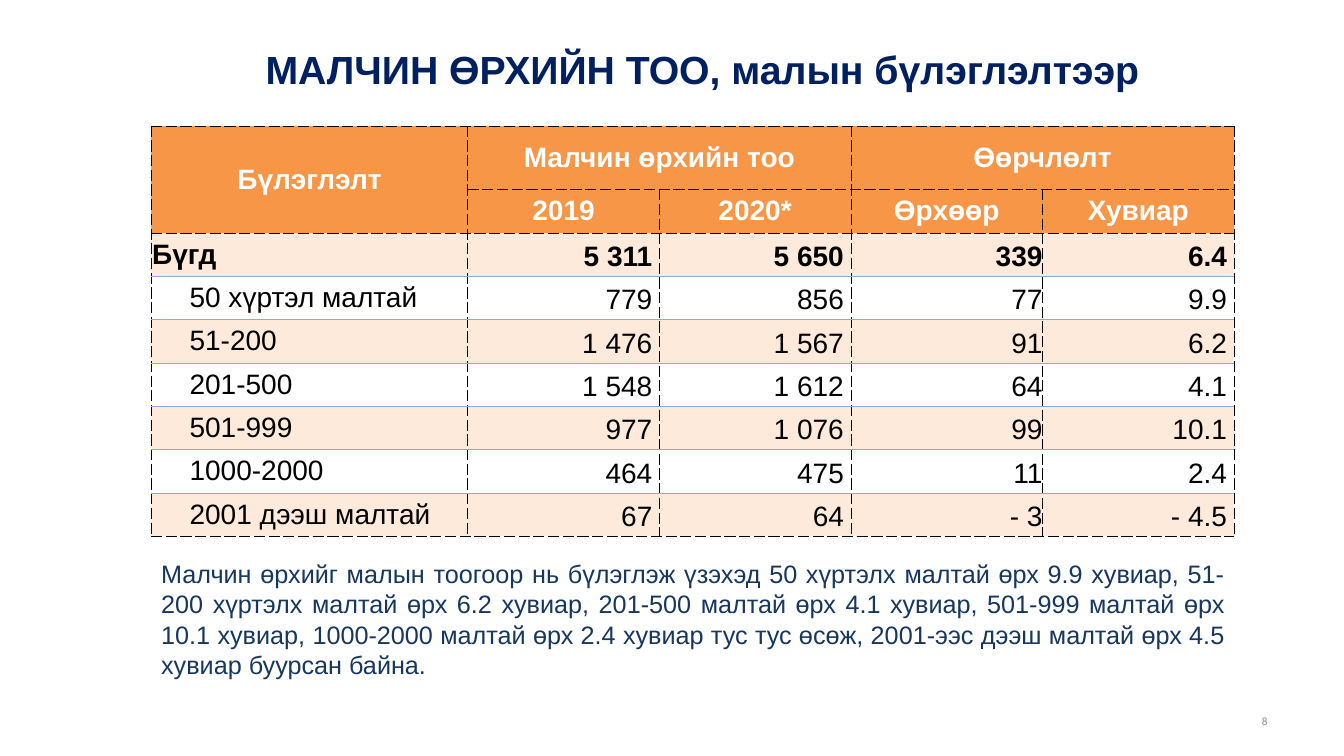
"""Build the slide on herder households grouped by herd size."""
from lxml.etree import SubElement
from pptx import Presentation
from pptx.dml.color import RGBColor
from pptx.enum.text import MSO_ANCHOR as Anchor, PP_ALIGN as Align
from pptx.oxml.ns import qn
from pptx.util import Inches, Pt

NAVY = RGBColor(0x00, 0x20, 0x60)
DARK_BLUE = RGBColor(0x17, 0x37, 0x5E)
GRAY = RGBColor(0x8C, 0x8C, 0x8C)
ORANGE = RGBColor(0xF7, 0x96, 0x46)
PEACH = RGBColor(0xFD, 0xEA, 0xDA)
RULE_BLUE = RGBColor(0x8E, 0xA9, 0xDB)
WHITE = RGBColor(0xFF, 0xFF, 0xFF)
BLACK = RGBColor(0x00, 0x00, 0x00)


def write(frame, text, size=20, color=BLACK, bold=False, align=Align.LEFT, font="Arial", spacing=1.0):
    frame.word_wrap = True
    paragraph = frame.paragraphs[0]
    paragraph.alignment = align
    paragraph.line_spacing = spacing
    run = paragraph.add_run()
    run.text = text
    run.font.name = font
    run.font.size = Pt(size)
    run.font.bold = bold
    run.font.color.rgb = color


def add_border(cell, side, color, dash):
    line = SubElement(cell._tc.get_or_add_tcPr(), qn(f"a:ln{side}"), w=str(Pt(0.5)))
    fill = SubElement(line, qn("a:solidFill"))
    SubElement(fill, qn("a:srgbClr"), val=str(color))
    SubElement(line, qn("a:prstDash"), val=dash)


presentation = Presentation()
presentation.slide_width = Inches(13.33)
presentation.slide_height = Inches(7.5)
slide = presentation.slides.add_slide(presentation.slide_layouts[5])

title = slide.shapes.title
title.left, title.top, title.width, title.height = Inches(1.84), Inches(0.4), Inches(10.25), Inches(0.57)
title.text_frame.vertical_anchor = Anchor.TOP
write(title.text_frame, "МАЛЧИН ӨРХИЙН ТОО, малын бүлэглэлтээр",
      size=28, color=NAVY, bold=True, align=Align.CENTER)

ROWS = [
    ("Бүлэглэлт", "Малчин өрхийн тоо", "", "Өөрчлөлт", ""),
    ("", "2019", "2020*", "Өрхөөр", "Хувиар"),
    ("Бүгд", "5 311", "5 650", "339", "6.4"),
    ("50 хүртэл малтай", "779", "856", "77", "9.9"),
    ("51-200", "1 476", "1 567", "91", "6.2"),
    ("201-500", "1 548", "1 612", "64", "4.1"),
    ("501-999", "977", "1 076", "99", "10.1"),
    ("1000-2000", "464", "475", "11", "2.4"),
    ("2001 дээш малтай", "67", "64", "- 3", "- 4.5"),
]
HEADER_ROWS = 2
TOTAL_ROW = 2
LAST_ROW = len(ROWS) - 1
COLUMN_WIDTHS = [3.14, 1.9, 1.9, 1.9, 1.9]
RIGHT_MARGINS = [0.01, 0.07, 0.07, 0, 0.07]

table = slide.shapes.add_table(len(ROWS), len(COLUMN_WIDTHS), Inches(1.5), Inches(1.25),
                               Inches(10.74), Inches(4.07)).table
table.first_row = False
table.horz_banding = False
for column, width in zip(table.columns, COLUMN_WIDTHS):
    column.width = Inches(width)
for index, row in enumerate(table.rows):
    row.height = Inches(0.63 if index == 0 else 0.43)
for first, last in (((0, 0), (1, 0)), ((0, 1), (0, 2)), ((0, 3), (0, 4))):
    table.cell(*first).merge(table.cell(*last))

for row_index, values in enumerate(ROWS):
    is_header = row_index < HEADER_ROWS
    dashed_sides = "LR"
    if row_index <= TOTAL_ROW:
        dashed_sides += "T"
    if is_header or row_index == LAST_ROW:
        dashed_sides += "B"
    for column_index, value in enumerate(values):
        cell = table.cell(row_index, column_index)
        is_label = column_index == 0
        cell.vertical_anchor = Anchor.MIDDLE
        cell.margin_top = cell.margin_bottom = 0
        cell.margin_left = Inches(0.38 if is_label and row_index > TOTAL_ROW else 0.01)
        cell.margin_right = Inches(0.01 if is_header else RIGHT_MARGINS[column_index])
        for side in "LRTB":
            if side in dashed_sides:
                add_border(cell, side, BLACK, "dash")
            else:
                add_border(cell, side, RULE_BLUE, "solid")
        if is_header or row_index % 2 == 0:
            cell.fill.solid()
            cell.fill.fore_color.rgb = ORANGE if is_header else PEACH
        else:
            cell.fill.background()
        if not value:
            continue
        if is_header:
            write(cell.text_frame, value, color=WHITE, bold=True, align=Align.CENTER)
        elif is_label:
            write(cell.text_frame, value, bold=row_index == TOTAL_ROW)
        else:
            write(cell.text_frame, value, bold=row_index == TOTAL_ROW, align=Align.RIGHT, spacing=1.15)

summary = slide.shapes.add_textbox(Inches(1.5), Inches(5.49), Inches(10.75), Inches(1.31))
write(summary.text_frame,
      "Малчин өрхийг малын тоогоор нь бүлэглэж үзэхэд 50 хүртэлх малтай өрх 9.9 хувиар, "
      "51-200 хүртэлх малтай өрх 6.2 хувиар, 201-500 малтай өрх 4.1 хувиар, 501-999 малтай өрх "
      "10.1 хувиар, 1000-2000 малтай өрх 2.4 хувиар тус тус өсөж, 2001-ээс дээш малтай өрх 4.5 "
      "хувиар буурсан байна.",
      size=18, color=DARK_BLUE, align=Align.JUSTIFY)

page_number = slide.shapes.add_textbox(Inches(9.56), Inches(6.95), Inches(3.11), Inches(0.4))
page_number.text_frame.vertical_anchor = Anchor.MIDDLE
write(page_number.text_frame, "8", size=8, color=GRAY, align=Align.RIGHT, font="Calibri")

presentation.save("out.pptx")
